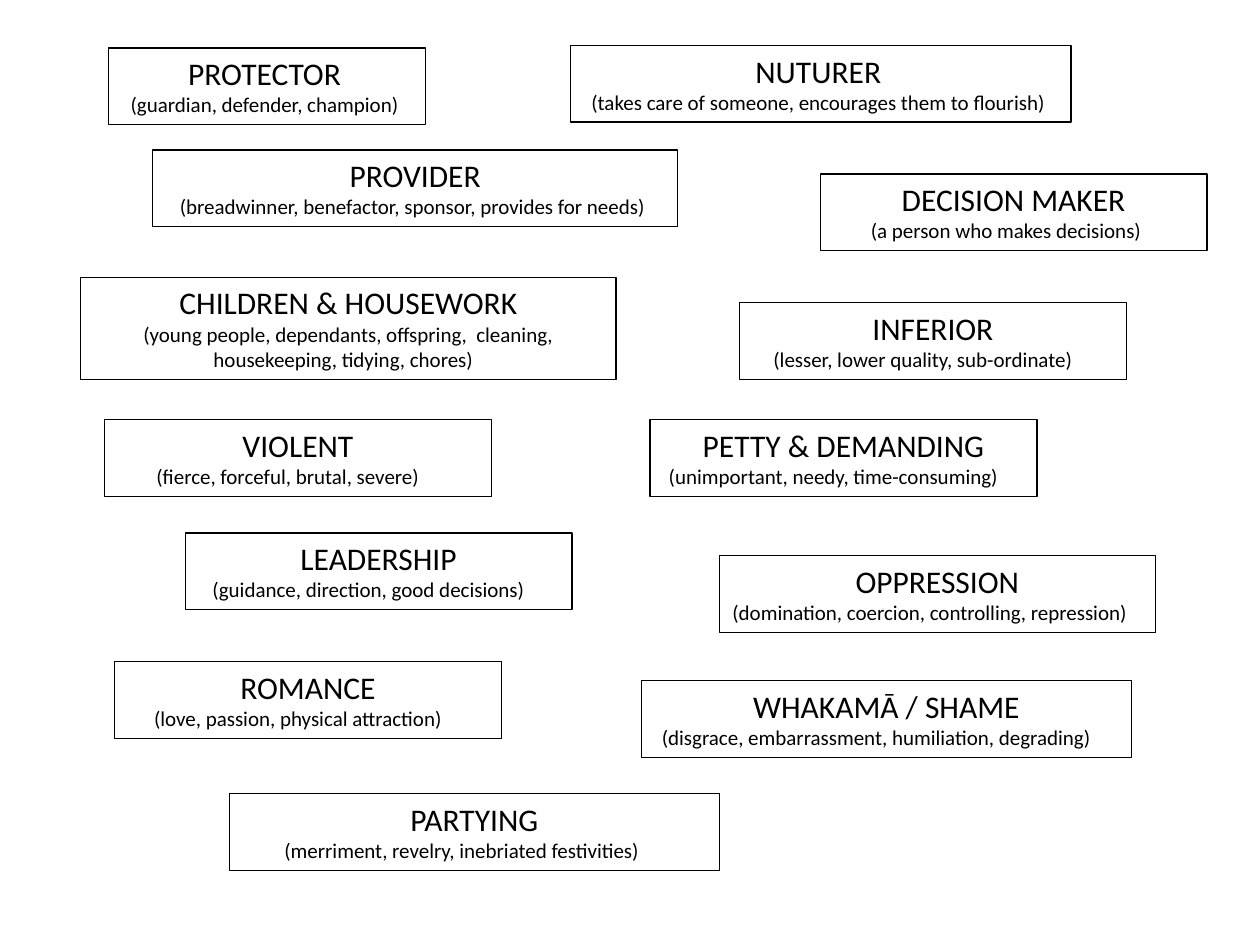
from pptx import Presentation
from pptx.dml.color import RGBColor
from pptx.enum.text import MSO_ANCHOR, MSO_AUTO_SIZE, PP_ALIGN
from pptx.util import Inches, Pt

CENTER = PP_ALIGN.CENTER
TOP = MSO_ANCHOR.TOP
GROW = MSO_AUTO_SIZE.SHAPE_TO_FIT_TEXT

BLACK = "000000"
FONT = "Calibri"
INSET = 0.1
CARD_H = 0.61
LINE_H = 0.2

# left, top, width, role, meaning, left shift of meaning, left shift of role, lines of meaning
CARDS = [
    (0.86, 0.38, 2.52, "PROTECTOR", "(guardian, defender, champion)", 0.02, 0.02, 1),
    (4.53, 0.36, 3.97, "NUTURER", "(takes care of someone, encourages them to flourish)",
     0.02, 0.02, 1),
    (1.21, 1.19, 4.17, "PROVIDER", "(breadwinner, benefactor, sponsor, provides for needs)",
     0.02, 0, 1),
    (0.64, 2.2, 4.25, "CHILDREN & HOUSEWORK",
     "(young people, dependants, offspring,  cleaning, housekeeping, tidying, chores)",
     0.04, 0, 2),
    (6.51, 1.38, 3.07, "DECISION MAKER", "(a person who makes decisions)", 0.06, 0, 1),
    (0.83, 3.33, 3.07, "VIOLENT", "(fierce, forceful, brutal, severe)", 0.08, 0, 1),
    (1.47, 4.23, 3.07, "LEADERSHIP", "(guidance, direction, good decisions)", 0.08, 0, 1),
    (0.91, 5.25, 3.07, "ROMANCE", "(love, passion, physical attraction)", 0.08, 0, 1),
    (5.87, 2.4, 3.07, "INFERIOR", "(lesser, lower quality, sub-ordinate)", 0.08, 0, 1),
    (5.16, 3.33, 3.07, "PETTY & DEMANDING", "(unimportant, needy, time-consuming)",
     0.08, 0, 1),
    (5.71, 4.41, 3.46, "OPPRESSION", "(domination, coercion, controlling, repression)",
     0.06, 0, 1),
    (5.09, 5.4, 3.89, "WHAKAMĀ / SHAME",
     "(disgrace, embarrassment, humiliation, degrading)", 0.08, 0, 1),
    (1.82, 6.3, 3.89, "PARTYING", "(merriment, revelry, inebriated festivities)", 0.1, 0, 1),
]


def rgb(value):
    return RGBColor.from_string(value)


def write(p, text, size=12, color=BLACK, font=FONT, align=CENTER, first_indent=0):
    p.alignment = align
    if first_indent:
        p_pr = p._p.get_or_add_pPr()
        p_pr.set("marL", "0")
        p_pr.set("indent", str(Inches(first_indent)))
    r = p.add_run()
    r.text = text
    r.font.name = font
    r.font.size = Pt(size)
    r.font.color.rgb = rgb(color)


def add_card(s, left, top, width, role, meaning, shift, role_shift, lines):
    """Outlined box; uneven insets shift the text left, first-line indents undo the shift."""
    height = CARD_H + (lines - 1) * LINE_H
    sp = s.shapes.add_textbox(Inches(left), Inches(top), Inches(width), Inches(height))
    sp.line.color.rgb = rgb(BLACK)
    sp.line.width = Pt(0.75)
    tf = sp.text_frame
    tf.word_wrap = True
    tf.auto_size = GROW
    tf.vertical_anchor = TOP
    tf.margin_left = Inches(INSET - shift)
    tf.margin_right = Inches(INSET + shift)
    write(tf.paragraphs[0], role, size=18, first_indent=2 * (shift - role_shift))
    write(tf.add_paragraph(), meaning, first_indent=2 * shift if lines > 1 else 0)


def main():
    prs = Presentation()
    prs.slide_width = Inches(10)
    prs.slide_height = Inches(7.5)
    s = prs.slides.add_slide(prs.slide_layouts[6])
    for card in CARDS:
        add_card(s, *card)
    prs.save("out.pptx")


if __name__ == "__main__":
    main()
